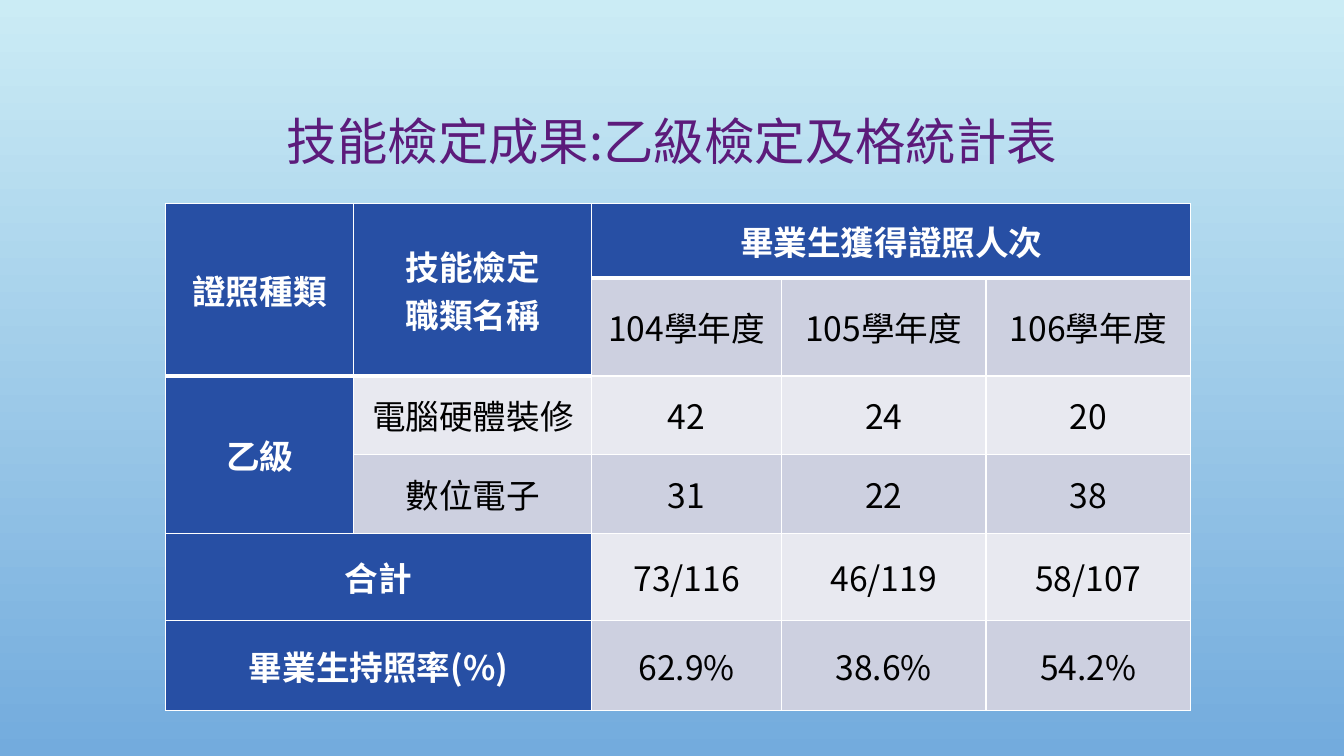
"""Build a slide with a table of level B skill certification results."""
from lxml import etree
from pptx import Presentation
from pptx.dml.color import RGBColor
from pptx.enum.text import MSO_ANCHOR as Anchor, PP_ALIGN as Align
from pptx.oxml.ns import qn
from pptx.util import Inches, Pt

TITLE = "技能檢定成果:乙級檢定及格統計表"
ROWS = [
    ["證照種類", "技能檢定\n職類名稱", "畢業生獲得證照人次", "", ""],
    ["", "", "104學年度", "105學年度", "106學年度"],
    ["乙級", "電腦硬體裝修", "42", "24", "20"],
    ["", "數位電子", "31", "22", "38"],
    ["合計", "", "73/116", "46/119", "58/107"],
    ["畢業生持照率(%)", "", "62.9%", "38.6%", "54.2%"],
]
MERGES = [((0, 0), (1, 0)), ((0, 1), (1, 1)), ((0, 2), (0, 4)),
          ((2, 0), (3, 0)), ((4, 0), (4, 1)), ((5, 0), (5, 1))]
COLUMN_WIDTHS = [1.87, 2.36, 1.88, 2.03, 2.03]
ROW_HEIGHTS = [0.74, 0.97, 0.78, 0.78, 0.87, 0.89]

FONT = "Noto Sans CJK SC"
WHITE = RGBColor(0xFF, 0xFF, 0xFF)
BLACK = RGBColor(0, 0, 0)
PURPLE = RGBColor(0x5C, 0x1B, 0x7B)
HEADER_BLUE = RGBColor(0x27, 0x4F, 0xA4)
BANDS = [RGBColor(0xE8, 0xE9, 0xF0), RGBColor(0xCD, 0xD0, 0xE0)]
SKY = [RGBColor(0xCB, 0xEC, 0xF5), RGBColor(0x73, 0xAB, 0xDD)]


def style_text(frame, size, color, bold=False):
    for para in frame.paragraphs:
        para.alignment = Align.CENTER
        for span in para.runs:
            font = span.font
            font.name, font.size, font.bold = FONT, Pt(size), bold
            font.color.rgb = color
            etree.SubElement(span._r.get_or_add_rPr(), qn("a:ea"), typeface=FONT)


def add_border(cell, side, width):
    line = etree.SubElement(cell._tc.get_or_add_tcPr(), qn(f"a:ln{side}"),
                            w=str(Pt(width)))
    fill = etree.SubElement(line, qn("a:solidFill"))
    etree.SubElement(fill, qn("a:srgbClr"), val=str(WHITE))


def is_header(row, column):
    return row == 0 or column == 0 or (column == 1 and row in (1, 4, 5))


def style_cell(cell, row, column):
    cell.text = ROWS[row][column].replace("\n", "\n")
    cell.vertical_anchor = Anchor.MIDDLE
    cell.margin_left = cell.margin_right = Inches(0.07)
    cell.margin_top = cell.margin_bottom = 0
    header = is_header(row, column)
    style_text(cell.text_frame, 24, WHITE if header else BLACK, header)

    last_heading_row = 1 if column < 2 else 0
    bottom_row = row + cell.span_height - 1 if cell.is_merge_origin else row
    add_border(cell, "L", 1)
    add_border(cell, "R", 1)
    add_border(cell, "T", 3 if row == last_heading_row + 1 else 1)
    add_border(cell, "B", 3 if bottom_row == last_heading_row else 1)
    cell.fill.solid()
    cell.fill.fore_color.rgb = HEADER_BLUE if header else BANDS[row % 2]


def add_title(page):
    box = page.shapes.add_textbox(Inches(1), Inches(0.68), Inches(11.33), Inches(1.5))
    frame = box.text_frame
    frame.word_wrap = True
    frame.vertical_anchor = Anchor.MIDDLE
    frame.text = TITLE
    frame.paragraphs[0].line_spacing = 0.9
    style_text(frame, 36, PURPLE)


def add_results(page):
    table = page.shapes.add_table(
        len(ROWS), len(COLUMN_WIDTHS), Inches(1.64), Inches(2.02),
        Inches(sum(COLUMN_WIDTHS)), Inches(sum(ROW_HEIGHTS))).table
    for column, width in zip(table.columns, COLUMN_WIDTHS):
        column.width = Inches(width)
    for row, height in zip(table.rows, ROW_HEIGHTS):
        row.height = Inches(height)
    for first, last in MERGES:
        table.cell(*first).merge(table.cell(*last))
    for row in range(len(ROWS)):
        for column in range(len(COLUMN_WIDTHS)):
            style_cell(table.cell(row, column), row, column)


def main():
    deck = Presentation()
    deck.slide_width, deck.slide_height = Inches(13.33), Inches(7.5)
    page = deck.slides.add_slide(deck.slide_layouts[6])
    sky = page.background.fill
    sky.gradient()
    sky.gradient_angle = 270
    for stop, color in zip(sky.gradient_stops, SKY):
        stop.color.rgb = color
    add_title(page)
    add_results(page)
    deck.save("out.pptx")


if __name__ == "__main__":
    main()
